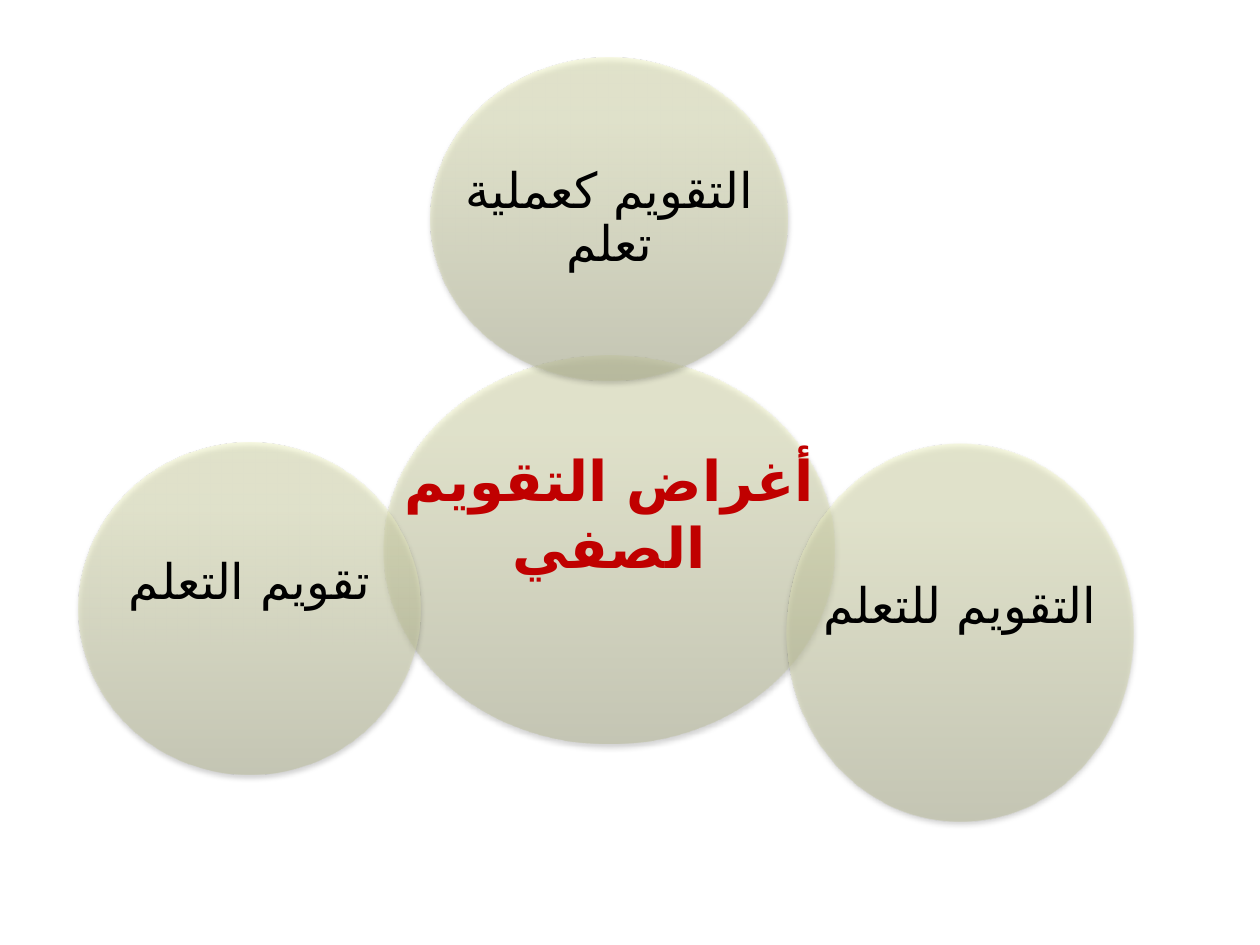
import pptx
import pptx.dml.color
import pptx.enum.shapes
import pptx.enum.text
import pptx.oxml
import pptx.oxml.ns
import pptx.util
from pptx.util import Cm

GRADIENT_STOPS = [(0, "B7B996"), (80, "EEF1C3"), (100, "F0F3C3")]
ARABIC_FONT = "DejaVu Sans"
DRAWING = pptx.oxml.ns.nsdecls("a")


def colour(value):
    return pptx.dml.color.RGBColor.from_string(value)


class Diagram:
    inset = Cm(0.1)

    def __init__(self, page):
        self.page = page

    def circle(self, left, top, width, height):
        """Draw a half-transparent gradient ellipse with a soft shadow."""
        shape = self.page.shapes.add_shape(
            pptx.enum.shapes.MSO_SHAPE.OVAL, left, top, width, height)
        shape.line.fill.background()
        stops = "".join(
            f'<a:gs pos="{position * 1000}"><a:srgbClr val="{value}">'
            '<a:alpha val="50000"/></a:srgbClr></a:gs>'
            for position, value in GRADIENT_STOPS)
        gradient = pptx.oxml.parse_xml(
            f'<a:gradFill {DRAWING} rotWithShape="1"><a:gsLst>{stops}</a:gsLst>'
            '<a:lin ang="16200000" scaled="0"/></a:gradFill>')
        shadow = pptx.oxml.parse_xml(
            f'<a:effectLst {DRAWING}><a:outerShdw blurRad="39370" dist="22860" '
            'dir="5400000" rotWithShape="0"><a:srgbClr val="000000">'
            '<a:alpha val="35000"/></a:srgbClr></a:outerShdw></a:effectLst>')
        outline = shape.line._ln
        outline.addprevious(gradient)
        outline.addnext(shadow)

    def label(self, bounds, text, size, font, ink="000000", bold=False,
              spacing=1.0, lift=0):
        """Centre right-to-left text; lift is extra room kept below it."""
        box = self.page.shapes.add_textbox(*bounds)
        frame = box.text_frame
        frame.word_wrap = True
        frame.vertical_anchor = pptx.enum.text.MSO_ANCHOR.MIDDLE
        frame.margin_left = frame.margin_right = frame.margin_top = self.inset
        frame.margin_bottom = self.inset + lift
        para = frame.paragraphs[0]
        para.text = text
        para.alignment = pptx.enum.text.PP_ALIGN.CENTER
        para.line_spacing = spacing
        para.font.size = pptx.util.Pt(size)
        para.font.bold = bold
        para.font.name = font
        para.font.color.rgb = colour(ink)
        properties = para._p.pPr
        properties.set("rtl", "1")
        properties.find(pptx.oxml.ns.qn("a:defRPr")).append(
            pptx.oxml.parse_xml(f'<a:cs {DRAWING} typeface="{ARABIC_FONT}"/>'))


def main():
    deck = pptx.Presentation()
    deck.slide_width, deck.slide_height = Cm(25.4), Cm(19.05)
    diagram = Diagram(deck.slides.add_slide(deck.slide_layouts[6]))
    circles = [
        ((7.73, 7.17, 9.1, 7.82), "أغراض التقويم الصفي",
         dict(size=32, font="Lato", ink="C00000", bold=True, lift=Cm(1.5))),
        ((8.68, 1.17, 7.2, 6.5), "التقويم كعملية تعلم",
         dict(size=28, font="Cabin", spacing=0.9)),
        ((15.86, 8.94, 6.98, 7.62), "التقويم للتعلم",
         dict(size=28, font="Lato", lift=Cm(1.15))),
        ((1.59, 8.92, 6.88, 6.7), "تقويم التعلم",
         dict(size=28, font="Lato", lift=Cm(1.15))),
    ]
    for lengths, text, style in circles:
        bounds = [Cm(length) for length in lengths]
        diagram.circle(*bounds)
        diagram.label(bounds, text, **style)
    deck.save("out.pptx")


if __name__ == "__main__":
    main()
